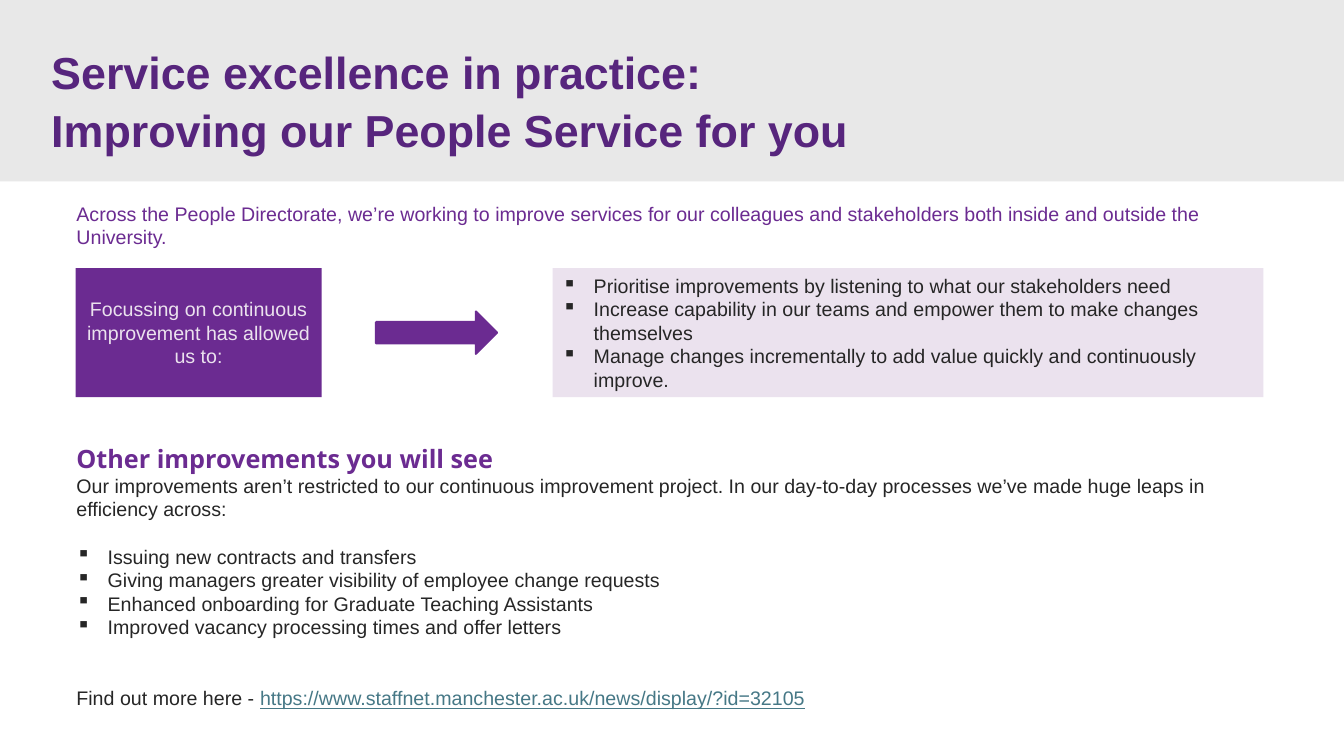
from dataclasses import dataclass
from lxml.etree import SubElement
from pptx import Presentation
from pptx.dml.color import RGBColor as RGB
from pptx.enum.shapes import MSO_SHAPE as SHAPE
from pptx.enum.text import MSO_ANCHOR as ANCHOR, PP_ALIGN as ALIGN
from pptx.oxml.ns import qn
from pptx.util import Inches, Pt

TITLE = ["Service excellence in practice:", "Improving our People Service for you"]
INTRO = ("Across the People Directorate, we’re working to improve services for our "
         "colleagues and stakeholders both inside and outside the University.")
FOCUS = "Focussing on continuous improvement has allowed us to:"
GAINS = [
    "Prioritise improvements by listening to what our stakeholders need",
    "Increase capability in our teams and empower them to make changes themselves",
    "Manage changes incrementally to add value quickly and continuously improve.",
]
HEADING = "Other improvements you will see"
LEAD = ("Our improvements aren’t restricted to our continuous improvement project. "
        "In our day-to-day processes we’ve made huge leaps in efficiency across:")
AREAS = [
    "Issuing new contracts and transfers",
    "Giving managers greater visibility of employee change requests",
    "Enhanced onboarding for Graduate Teaching Assistants",
    "Improved vacancy processing times and offer letters",
]
MORE = "Find out more here - "
LINK = "https://www.staffnet.manchester.ac.uk/news/display/?id=32105"


@dataclass(frozen=True)
class Theme:
    band: str = "E8E8E8"
    title: str = "57257D"
    purple: str = "6B2B91"
    pale: str = "EBE2EE"
    ink: str = "262626"
    link: str = "467886"
    font: str = "Arial"
    head_font: str = "Open Sans"
    title_size: int = 32
    head_size: int = 18
    body_size: int = 14
    line_gap: int = 17


T = Theme()
LEFT, WIDTH = 0.66, 11.87
RIGHT = LEFT + WIDTH
ROW_TOP, ROW_TALL = 2.66, 1.28
GAINS_WIDE = 7.05
ARROW_TALL = 0.42

deck = Presentation()
deck.slide_width, deck.slide_height = Inches(13.33), Inches(7.5)
slide = deck.slides.add_slide(deck.slide_layouts[6])


def block(kind, left, top, wide, tall, fill, line=None):
    shape = slide.shapes.add_shape(kind, *map(Inches, (left, top, wide, tall)))
    shape.shadow.inherit = False
    shape.fill.solid()
    shape.fill.fore_color.rgb = RGB.from_string(fill)
    if line:
        shape.line.color.rgb = RGB.from_string(fill)
        shape.line.width = Pt(line)
    else:
        shape.line.fill.background()
    shape.text_frame.word_wrap = True
    shape.text_frame.vertical_anchor = ANCHOR.MIDDLE
    return shape.text_frame


def box(left, top, wide, tall):
    frame = slide.shapes.add_textbox(*map(Inches, (left, top, wide, tall))).text_frame
    frame.word_wrap = True
    return frame


def add_run(para, text, size=T.body_size, color=T.ink, font=T.font, bold=False, under=False):
    run = para.add_run()
    run.text = text
    run.font.size, run.font.name = Pt(size), font
    run.font.bold, run.font.underline = bold, under
    run.font.color.rgb = RGB.from_string(color)


def write(frame, text, align=ALIGN.LEFT, bullet=False, before=0, spacing=None, **style):
    """Add one paragraph, using the frame's first one if it is still empty."""
    para = frame.paragraphs[0]
    if para.runs:
        para = frame.add_paragraph()
    para.alignment = align
    if before:
        para.space_before = Pt(before)
    if spacing:
        para.line_spacing = spacing
    if bullet:
        props = para._p.get_or_add_pPr()
        props.set("marL", str(Inches(0.31)))
        props.set("indent", str(-Inches(0.31)))
        SubElement(props, qn("a:buChar")).set("char", "▪")
    add_run(para, text, **style)
    return para


block(SHAPE.RECTANGLE, 0, -0.01, 13.46, 1.81, T.band)
title = box(0.41, 0.36, 12.75, 1.21)
for text in TITLE:
    write(title, text, spacing=1.07, size=T.title_size, color=T.title, bold=True)

write(box(LEFT, 1.95, WIDTH, 0.57), INTRO, color=T.purple)

focus = block(SHAPE.RECTANGLE, 0.75, ROW_TOP, 2.44, ROW_TALL, T.purple)
write(focus, FOCUS, align=ALIGN.CENTER, color=T.pale)
block(SHAPE.RIGHT_ARROW, 3.73, ROW_TOP + (ROW_TALL - ARROW_TALL) / 2, 1.2, ARROW_TALL,
      T.purple, line=1.5)
gains = block(SHAPE.RECTANGLE, RIGHT - GAINS_WIDE, ROW_TOP, GAINS_WIDE, ROW_TALL, T.pale)
for text in GAINS:
    write(gains, text, bullet=True)

other = box(LEFT, 4.35, WIDTH, 2.76)
write(other, HEADING, size=T.head_size, color=T.purple, font=T.head_font, bold=True)
write(other, LEAD)
for i, text in enumerate(AREAS):
    write(other, text, bullet=True, before=0 if i else T.line_gap)
more = write(other, MORE, before=2 * T.line_gap)
add_run(more, LINK, color=T.link, under=True)

deck.save("out.pptx")
